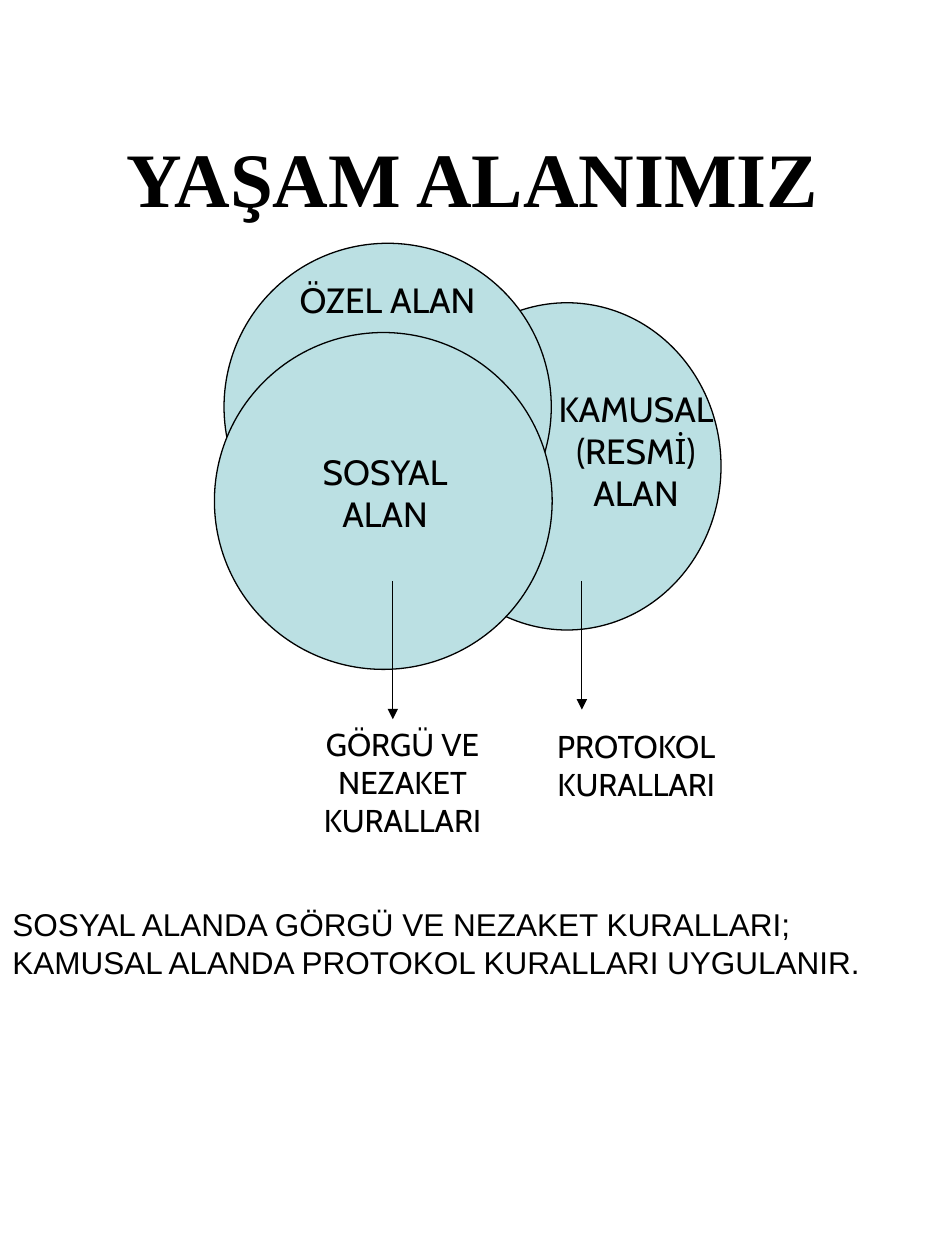
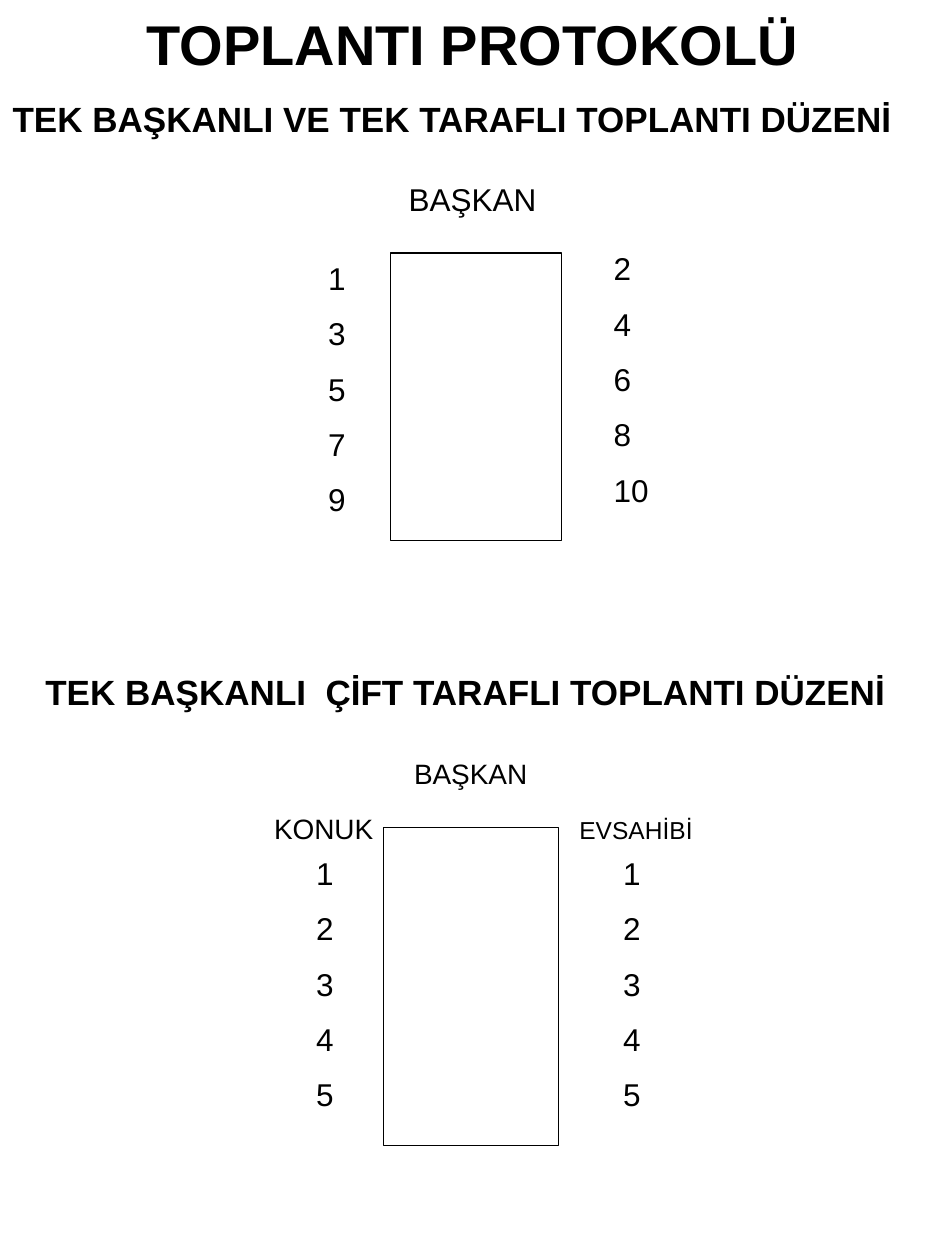
from lxml import etree
from pptx import Presentation
from pptx.dml.color import RGBColor
from pptx.enum.shapes import MSO_CONNECTOR as CXN, MSO_SHAPE as SHP
from pptx.enum.text import MSO_ANCHOR as ANC, MSO_AUTO_SIZE as FIT, PP_ALIGN as AL
from pptx.oxml.ns import qn
from pptx.util import Pt

INK, AREA, PAPER = "000000", "BBE0E3", "FFFFFF"


def color(target, value):
    target.rgb = RGBColor.from_string(value)


def write(sp, lines, gap=0, align=AL.LEFT, spacing=None, **font):
    tf = sp.text_frame
    tf.word_wrap = True
    tf.auto_size = FIT.NONE
    for i, line in enumerate(lines):
        p = tf.paragraphs[0] if i == 0 else tf.add_paragraph()
        p.alignment = align
        p.space_before = Pt(gap if i else 0)
        if spacing:
            p.line_spacing = spacing
        r = p.add_run()
        r.text = line
        for key, value in font.items():
            setattr(r.font, key, value)
        color(r.font.color, INK)
    return tf


prs = Presentation()
prs.slide_width, prs.slide_height = Pt(540), Pt(720)
layout = prs.slide_layouts[5]
areas, meetings = [prs.slides.add_slide(layout) for _ in range(2)]

titles = [
    (areas, (27, 29, 486, 120), ["YAŞAM ALANIMIZ"],
     dict(name="Times New Roman", size=Pt(44), bold=True, align=AL.CENTER, spacing=1.45)),
    (meetings, (0, 2, 540, 81),
     ["TOPLANTI PROTOKOLÜ", "TEK BAŞKANLI VE TEK TARAFLI TOPLANTI DÜZENİ"],
     dict(name="Arial", size=Pt(32), bold=True, gap=11.5)),
]
for s, box, lines, style in titles:
    sp = s.shapes.title
    sp.left, sp.top, sp.width, sp.height = map(Pt, box)
    tf = write(sp, lines, **style)
    tf.vertical_anchor = ANC.MIDDLE
tf.paragraphs[0].alignment = AL.CENTER
tf.paragraphs[1].runs[0].font.size = Pt(20)

outlines = [
    (areas, SHP.OVAL, AREA, (236, 173, 176, 187)),
    (areas, SHP.OVAL, AREA, (128, 139, 187, 187)),
    (areas, SHP.OVAL, AREA, (122.5, 190, 193, 192.5)),
    (meetings, SHP.RECTANGLE, PAPER, (223, 144.5, 98, 164.5)),
    (meetings, SHP.RECTANGLE, PAPER, (219, 473, 100, 181.5)),
]
for s, kind, fill, box in outlines:
    sp = s.shapes.add_shape(kind, *map(Pt, box))
    sp.shadow.inherit = False
    sp.fill.solid()
    color(sp.fill.fore_color, fill)
    color(sp.line.color, INK)
    sp.line.width = Pt(0.75)

for x, bottom in [(224.5, 411), (332.5, 405.5)]:
    arrow = areas.shapes.add_connector(CXN.STRAIGHT, Pt(x), Pt(332), Pt(x), Pt(bottom))
    color(arrow.line.color, INK)
    arrow.line.width = Pt(0.75)
    spPr = arrow.element.spPr
    etree.SubElement(spPr.find(qn("a:ln")), qn("a:tailEnd"), type="triangle")
    etree.SubElement(spPr, qn("a:effectLst"))

area_label = dict(name="Cabin", size=Pt(20), align=AL.CENTER)
rule_label = dict(area_label, size=Pt(18))
body = dict(name="Arial", size=Pt(18))
seats = dict(body, gap=10)
texts = [
    (areas, (309.5, 218, 108, 79), ["KAMUSAL (RESMİ) ALAN"], area_label),
    (areas, (168, 254, 104, 55), ["SOSYAL ALAN"], area_label),
    (areas, (139.5, 155.5, 164, 32), ["ÖZEL ALAN"], area_label),
    (areas, (162, 411, 136, 72), ["GÖRGÜ VE NEZAKET KURALLARI"], rule_label),
    (areas, (292.5, 412, 142, 50), ["PROTOKOL KURALLARI"], rule_label),
    (areas, (0, 513.5, 540, 50),
     ["SOSYAL ALANDA GÖRGÜ VE NEZAKET KURALLARI; "
      "KAMUSAL ALANDA PROTOKOL KURALLARI UYGULANIR."], body),
    (meetings, (343.5, 139, 45.5, 212), [str(n) for n in range(2, 11, 2)], seats),
    (meetings, (180.5, 144.5, 55.5, 212), [str(n) for n in range(1, 10, 2)], seats),
    (meetings, (191, 99.5, 158, 29), ["BAŞKAN"], dict(body, align=AL.CENTER)),
    (meetings, (16, 379.5, 500, 31), ["TEK BAŞKANLI  ÇİFT TARAFLI TOPLANTI DÜZENİ"],
     dict(body, size=Pt(20), bold=True, align=AL.CENTER)),
    (meetings, (349, 484.5, 45.5, 212), [str(n) for n in range(1, 6)], seats),
    (meetings, (173.5, 484.5, 45.5, 212), [str(n) for n in range(1, 6)], seats),
    (meetings, (145.5, 428.5, 300, 59), ["\tBAŞKAN", "\tKONUK\t"],
     dict(body, size=Pt(16), gap=12.5)),
]
for s, box, lines, style in texts:
    tf = write(s.shapes.add_textbox(*map(Pt, box)), lines, **style)

host = tf.paragraphs[1].add_run()
host.text = "EVSAHİBİ"
host.font.name, host.font.size = "Arial", Pt(14)
color(host.font.color, INK)
for p, stops in zip(tf.paragraphs, [(84,), (4, 178.5)]):
    tabs = etree.SubElement(p._p.get_or_add_pPr(), qn("a:tabLst"))
    for stop in stops:
        etree.SubElement(tabs, qn("a:tab"), pos=str(Pt(stop)), algn="l")

prs.save("out.pptx")
